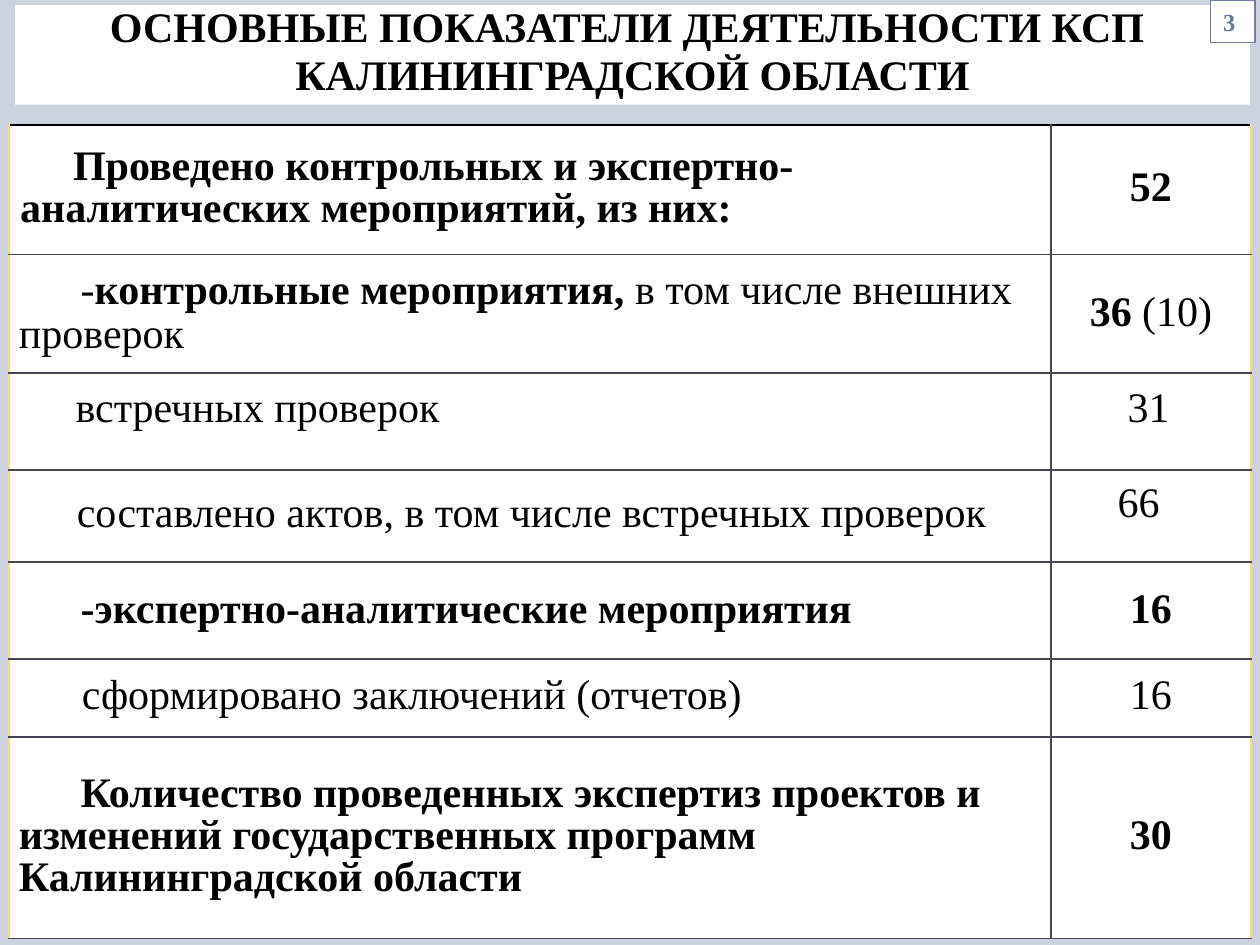
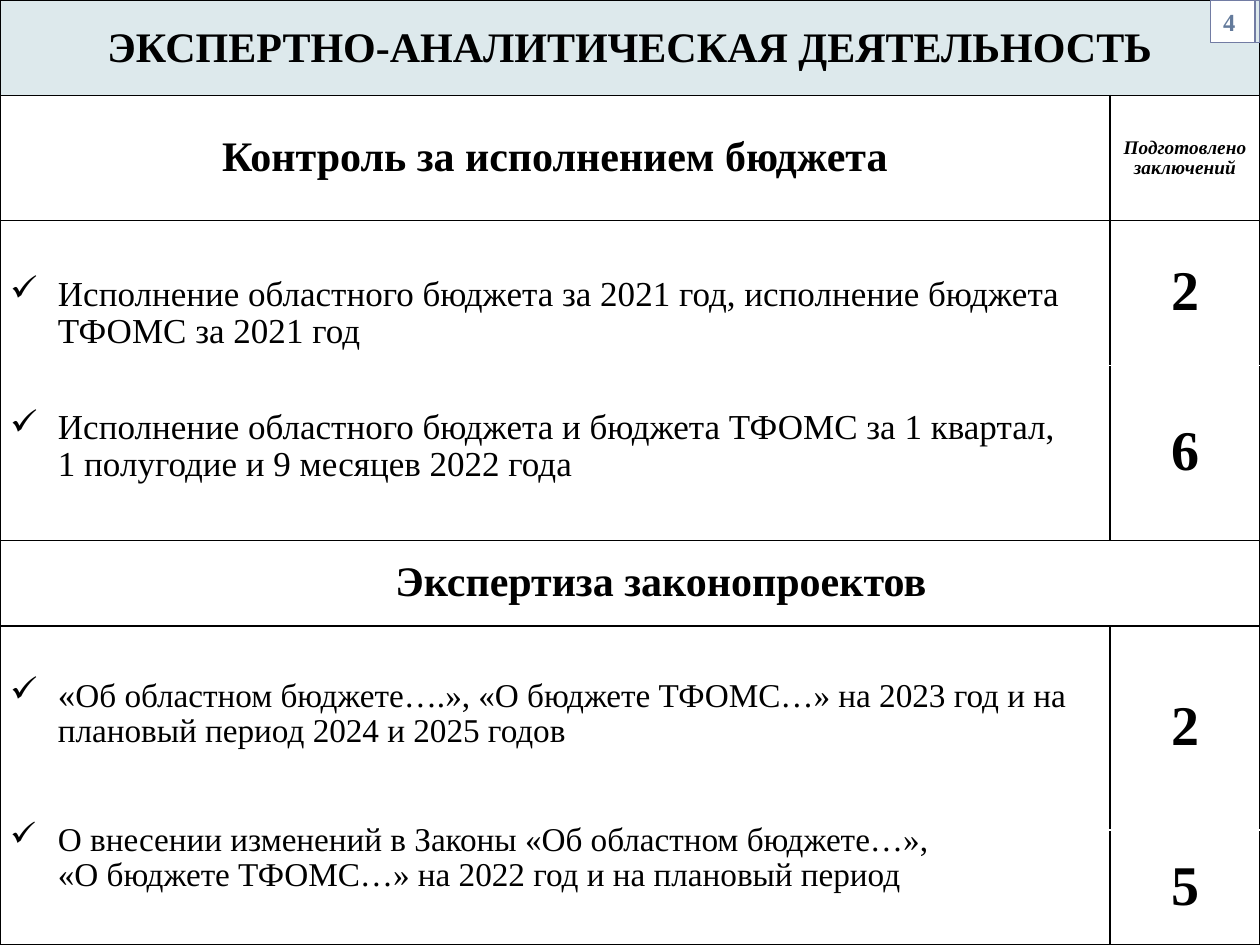
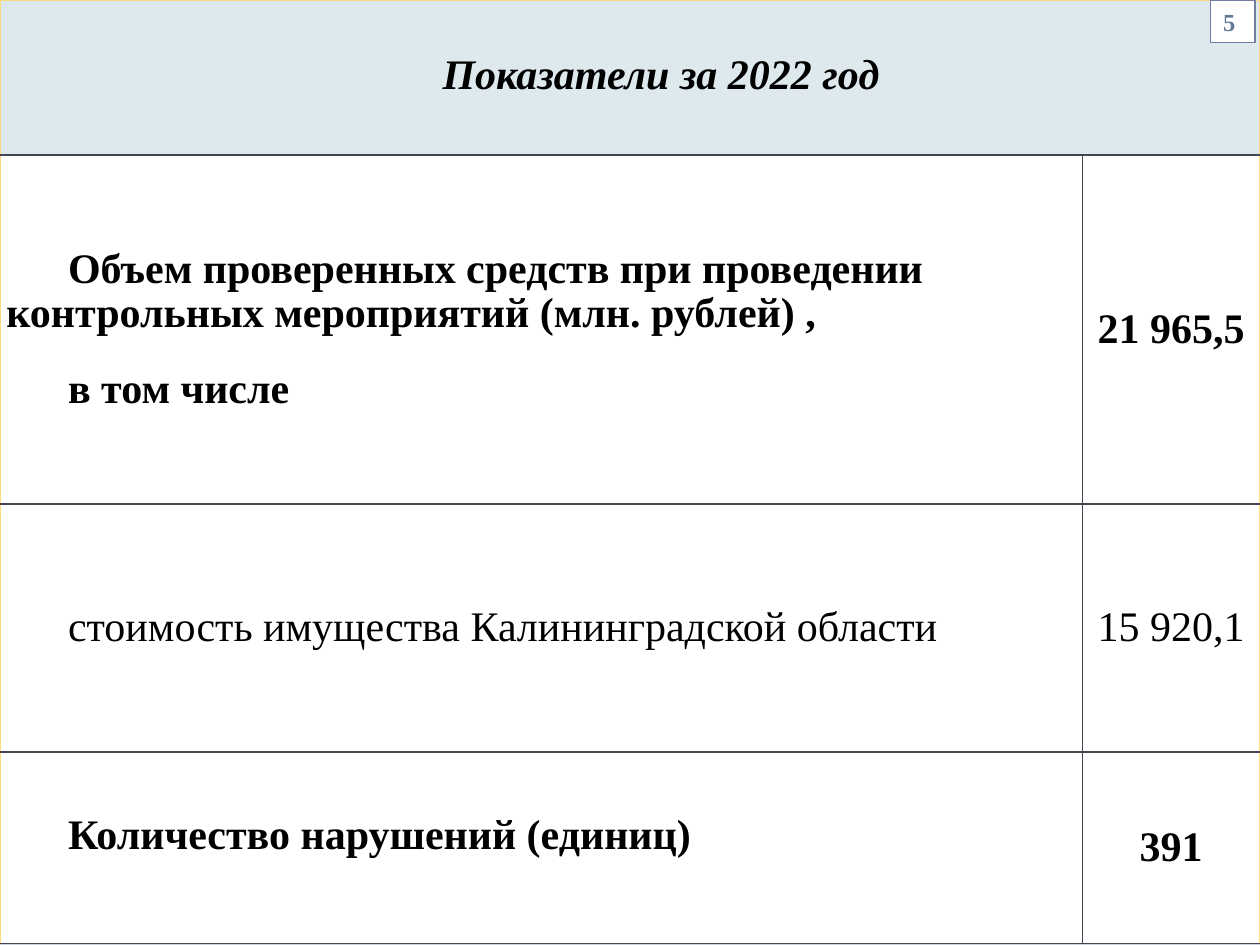
"""Builds three slides on the work of the Kaliningrad region audit chamber."""
import dataclasses
import typing

import lxml.etree
import pptx
import pptx.dml.color
import pptx.enum.shapes
import pptx.enum.text
import pptx.oxml.ns
import pptx.util

Inches = pptx.util.Inches
Pt = pptx.util.Pt
LEFT = pptx.enum.text.PP_ALIGN.LEFT
CENTER = pptx.enum.text.PP_ALIGN.CENTER
MIDDLE = pptx.enum.text.MSO_ANCHOR.MIDDLE


@dataclasses.dataclass(frozen=True)
class Theme:
    font: str = "Times New Roman"
    background: str = "CCD3DE"
    paper: str = "FFFFFF"
    band: str = "DDE9EC"
    ink: str = "000000"
    rule: str = "464653"
    side: str = "FADA7A"
    badge_line: str = "727CA3"
    badge_text: str = "637A9B"
    main: float = 24
    item: float = 20
    bill: float = 19
    badge: float = 14
    note: float = 11
    count: float = 32
    leading: float = 0.95


THEME = Theme()


@dataclasses.dataclass(frozen=True)
class Run:
    text: str
    bold: bool = False
    italic: bool = False
    size: float = THEME.main
    color: str = THEME.ink


@dataclasses.dataclass(frozen=True)
class Para:
    runs: tuple[Run, ...]
    align: typing.Any = LEFT
    leading: typing.Any = THEME.leading
    margin: float = 0
    indent: float = 0
    before: float = 0
    bullet: str = ""


@dataclasses.dataclass(frozen=True)
class Cell:
    paras: tuple[Para, ...]
    inset: tuple[float, float, float, float] = (0.08, 0, 0.08, 0)
    fill: str = THEME.paper
    span: tuple[int, int] = (1, 1)
    edges: dict[str, str] = dataclasses.field(default_factory=dict)


@dataclasses.dataclass(frozen=True)
class Grid:
    left: float
    top: float
    columns: tuple[float, ...]
    heights: tuple[float, ...]
    rows: tuple[tuple[Cell | None, ...], ...]
    rule: str = THEME.rule
    side: str = THEME.side
    head: str = THEME.ink


@dataclasses.dataclass(frozen=True)
class Box:
    left: float
    top: float
    width: float
    height: float
    para: Para | None = None
    fill: str | None = THEME.paper
    line: str | None = None
    inset: tuple[float, float, float, float] = (0.1, 0.05, 0.1, 0.05)


def apply(target: typing.Any, values: dict[str, typing.Any]) -> None:
    for name, value in values.items():
        setattr(target, name, value)


def rgb(color: str) -> pptx.dml.color.RGBColor:
    return pptx.dml.color.RGBColor.from_string(color)


def margins(inset: tuple[float, float, float, float]) -> dict[str, typing.Any]:
    names = ("margin_left", "margin_top", "margin_right", "margin_bottom")
    return {name: Inches(value) for name, value in zip(names, inset)}


def write_run(paragraph: typing.Any, run: Run) -> None:
    for number, line in enumerate(run.text.split("\n")):
        if number:
            paragraph.add_line_break()
        piece = paragraph.add_run()
        piece.text = line
        apply(piece.font, {"name": THEME.font, "size": Pt(run.size),
                           "bold": run.bold, "italic": run.italic})
        piece.font.color.rgb = rgb(run.color)


def write(frame: typing.Any, paras: tuple[Para, ...]) -> None:
    for number, para in enumerate(paras):
        paragraph = frame.add_paragraph() if number else frame.paragraphs[0]
        properties = paragraph._p.get_or_add_pPr()
        properties.set("marL", str(Inches(para.margin)))
        properties.set("indent", str(Inches(para.indent)))
        if para.bullet:
            lxml.etree.SubElement(properties, pptx.oxml.ns.qn("a:buChar"), char=para.bullet)
        apply(paragraph, {"alignment": para.align, "line_spacing": para.leading,
                          "space_before": Pt(para.before), "space_after": Pt(0)})
        for run in para.runs:
            write_run(paragraph, run)


def draw_box(slide: typing.Any, box: Box) -> None:
    place = (Inches(value) for value in (box.left, box.top, box.width, box.height))
    shape = slide.shapes.add_shape(pptx.enum.shapes.MSO_SHAPE.RECTANGLE, *place)
    shape.shadow.inherit = False
    if box.fill:
        shape.fill.solid()
        shape.fill.fore_color.rgb = rgb(box.fill)
    else:
        shape.fill.background()
    if box.line:
        shape.line.color.rgb = rgb(box.line)
        shape.line.width = Pt(0.75)
    else:
        shape.line.fill.background()
    if box.para:
        apply(shape.text_frame, {"word_wrap": True, "vertical_anchor": MIDDLE,
                                 **margins(box.inset)})
        write(shape.text_frame, (box.para,))


def draw_edges(cell: typing.Any, edges: dict[str, str]) -> None:
    properties = cell._tc.get_or_add_tcPr()
    for edge in "LRTB":
        line = lxml.etree.SubElement(properties, pptx.oxml.ns.qn(f"a:ln{edge}"), w=str(Pt(1)))
        fill = lxml.etree.SubElement(line, pptx.oxml.ns.qn("a:solidFill"))
        lxml.etree.SubElement(fill, pptx.oxml.ns.qn("a:srgbClr"), val=edges[edge])


def draw_grid(slide: typing.Any, grid: Grid) -> None:
    table = slide.shapes.add_table(
        len(grid.heights), len(grid.columns), Inches(grid.left), Inches(grid.top),
        Inches(sum(grid.columns)), Inches(sum(grid.heights))).table
    apply(table, {"first_row": False, "horz_banding": False})
    for column, width in zip(table.columns, grid.columns):
        column.width = Inches(width)
    for row, height in zip(table.rows, grid.heights):
        row.height = Inches(height)
    for y, row_cells in enumerate(grid.rows):
        for x, content in enumerate(row_cells):
            if content is None:
                continue
            cell = table.cell(y, x)
            tall, wide = content.span
            if content.span != (1, 1):
                cell.merge(table.cell(y + tall - 1, x + wide - 1))
            draw_edges(cell, {
                "L": grid.rule if x else grid.side,
                "R": grid.side if x + wide == len(grid.columns) else grid.rule,
                "T": grid.rule if y else grid.head,
                "B": grid.rule, **content.edges})
            cell.fill.solid()
            cell.fill.fore_color.rgb = rgb(content.fill)
            apply(cell, {"vertical_anchor": MIDDLE, **margins(content.inset)})
            write(cell.text_frame, content.paras)


def new_slide(deck: typing.Any) -> typing.Any:
    slide = deck.slides.add_slide(deck.slide_layouts[6])
    slide.background.fill.solid()
    slide.background.fill.fore_color.rgb = rgb(THEME.background)
    return slide


def draw_page_number(slide: typing.Any, number: int) -> None:
    run = Run(str(number), bold=True, size=THEME.badge, color=THEME.badge_text)
    draw_box(slide, Box(9.61, 0, 0.35, 0.34, Para((run,), leading=1.0), line=THEME.badge_line))


def label(*runs: Run, indent: float = 0.49, leading: float = 24,
          inset: tuple[float, float, float, float] = (0.08, 0, 0.08, 0)) -> Cell:
    return Cell((Para(runs, indent=indent, leading=Pt(leading)),), inset)


def value(*runs: Run, leading: typing.Any = Pt(24), **options: typing.Any) -> Cell:
    return Cell((Para(runs, CENTER, leading),), **options)


def add_indicators(deck: typing.Any) -> None:
    slide = new_slide(deck)
    head_inset = (0.09, 0.05, 0.09, 0.05)
    slim = (0.04, 0, 0.04, 0)
    rows = (
        (label(Run("Проведено контрольных и экспертно-аналитических мероприятий, из них:", True),
               indent=0.42, inset=head_inset),
         value(Run("52", True), inset=head_inset)),
        (label(Run("-"), Run("контрольные мероприятия, ", True),
               Run("в том числе внешних проверок"), leading=25),
         value(Run("36", True), Run(" (10)"), leading=Pt(25))),
        (label(Run("встречных проверок"), leading=12, inset=slim),
         label(Run("31"), indent=0.57, leading=12, inset=slim)),
        (label(Run("составлено актов, в том числе встречных проверок"), indent=0.5, inset=slim),
         label(Run("66"), leading=12, inset=slim)),
        (label(Run("-экспертно-аналитические мероприятия", True), leading=25),
         value(Run("16", True), leading=Pt(25))),
        (label(Run("сформировано заключений (отчетов)"), indent=0.5), value(Run("16"))),
        (label(Run("Количество проведенных экспертиз проектов и изменений "
                   "государственных программ Калининградской области", True)),
         value(Run("30", True))),
    )
    draw_grid(slide, Grid(0.07, 0.99, (8.27, 1.59),
                          (1.03, 0.94, 0.77, 0.73, 0.77, 0.62, 1.6), rows))
    title = Run("ОСНОВНЫЕ ПОКАЗАТЕЛИ ДЕЯТЕЛЬНОСТИ КСП \nКАЛИНИНГРАДСКОЙ ОБЛАСТИ", True)
    draw_box(slide, Box(0.12, 0.04, 9.8, 0.79, Para((title,), CENTER),
                        inset=(0.1, 0.01, 0.1, 0.05)))
    draw_page_number(slide, 3)


def checked(*runs: Run, before: float = 0) -> Para:
    return Para(runs, margin=0.38, indent=-0.38, before=before, bullet="✓")


def count(text: str, open_edge: str) -> Cell:
    return value(Run(text, True, size=THEME.count), leading=THEME.leading,
                 edges={open_edge: THEME.paper})


def add_expert_work(deck: typing.Any) -> None:
    slide = new_slide(deck)
    title = Run("ЭКСПЕРТНО-АНАЛИТИЧЕСКАЯ ДЕЯТЕЛЬНОСТЬ", True)
    draw_box(slide, Box(0, 0, 10, 0.76, Para((title,), CENTER), THEME.band, THEME.ink))
    head_inset = (0.09, 0.05, 0.09, 0.05)
    budget = Cell((
        checked(Run("Исполнение областного бюджета за 2021 год, исполнение бюджета "
                    "ТФОМС за 2021 год", size=THEME.item)),
        checked(Run("Исполнение областного бюджета и бюджета ТФОМС за 1 квартал, \n"
                    "1 полугодие и 9 месяцев 2022 года", size=THEME.item), before=34),
    ), span=(2, 1))
    bills = Cell((
        checked(Run("«", size=THEME.item),
                Run("Об областном бюджете….», «О бюджете ТФОМС…» на 2023 год и на "
                    "плановый период 2024 и 2025 годов", size=THEME.bill)),
        checked(Run("О внесении изменений в Законы «Об областном бюджете…», \n"
                    "«О бюджете ТФОМС…» на 2022 год и на плановый период",
                    size=THEME.bill), before=42),
    ), span=(2, 1))
    section = Para((Run("Экспертиза законопроектов", True),), CENTER, indent=0.49)
    rows = (
        (value(Run("Контроль за исполнением бюджета", True),
               leading=THEME.leading, inset=head_inset),
         value(Run("Подготовлено заключений", True, True, THEME.note),
               leading=THEME.leading, inset=head_inset)),
        (budget, count("2", "B")),
        (None, count("6", "T")),
        (Cell((section,), span=(1, 2)), None),
        (bills, count("2", "B")),
        (None, count("5", "T")),
    )
    draw_grid(slide, Grid(0, 0.76, (8.81, 1.19), (0.99, 1.15, 1.39, 0.68, 1.62, 0.91),
                          rows, rule=THEME.ink, side=THEME.ink))
    draw_box(slide, Box(9.65, 0, 0.35, 0.34, fill=None, line=THEME.badge_line))
    draw_page_number(slide, 4)


def add_year_results(deck: typing.Any) -> None:
    slide = new_slide(deck)
    slim = (0.01, 0.01, 0.01, 0)

    def entry(*texts: str, bold: bool = True, leading: typing.Any = THEME.leading) -> Cell:
        return Cell(tuple(Para((Run(text, bold),), leading=leading, margin=0.04, indent=0.49,
                               before=18 if number else 0)
                          for number, text in enumerate(texts)), slim)

    def amount(text: str, bold: bool = True) -> Cell:
        return value(Run(text, bold), leading=THEME.leading, inset=slim)

    period = Para((Run("Показатели за 2022 год", True, True),), CENTER, Pt(23), indent=0.49)
    rows = (
        (Cell((period,), (0.08, 0.05, 0.08, 0.04), THEME.band, (1, 2)), None),
        (entry("Объем проверенных средств при проведении контрольных мероприятий "
               "(млн. рублей) ,", "в том числе"), amount("21 965,5")),
        (entry("стоимость имущества Калининградской области", bold=False),
         amount("15 920,1", False)),
        (entry("Количество нарушений (единиц)", leading=Pt(12)), amount("391")),
    )
    draw_grid(slide, Grid(0, 0, (8.59, 1.41), (1.23, 2.77, 1.97, 1.52), rows,
                          head=THEME.side))
    draw_page_number(slide, 5)


def main() -> None:
    deck = pptx.Presentation()
    apply(deck, {"slide_width": Inches(10), "slide_height": Inches(7.5)})
    for add_slide in (add_indicators, add_expert_work, add_year_results):
        add_slide(deck)
    deck.save("out.pptx")


if __name__ == "__main__":
    main()
